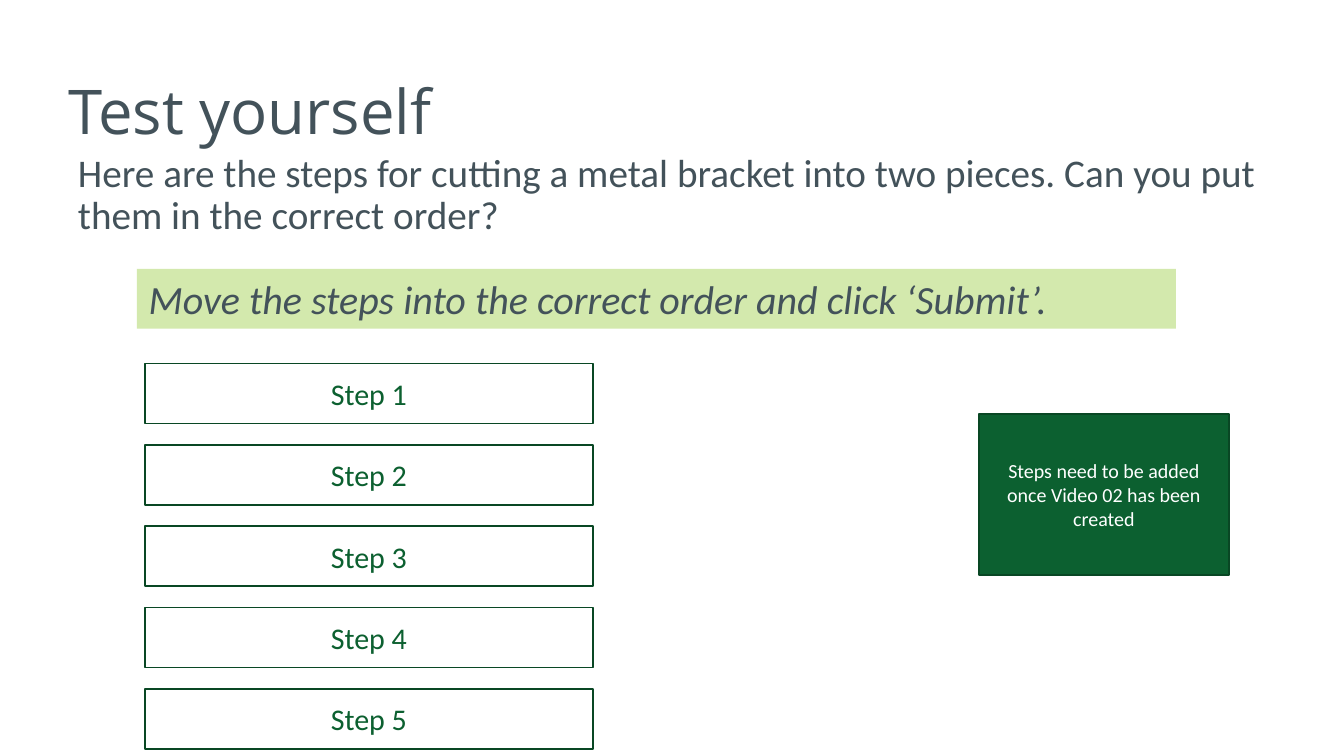
from pptx import Presentation
from pptx.dml.color import RGBColor
from pptx.enum import shapes, text
from pptx.util import Inches, Pt

SLATE, GREEN, DARK_GREEN = "43525A", "0C6030", "094724"
LIME, WHITE = "D3E9AD", "FFFFFF"
STEPS = [f"Step {n}" for n in range(1, 6)]
STEP_HEIGHT = 0.5


def color(value):
    return RGBColor.from_string(value)


def write(sp, words, size, ink, font="Calibri", anchor=text.MSO_ANCHOR.MIDDLE):
    """Fill a shape with one wrapped paragraph and return the paragraph."""
    tf = sp.text_frame
    tf.word_wrap = True
    tf.vertical_anchor = anchor
    p = tf.paragraphs[0]
    p.text = words
    p.alignment = text.PP_ALIGN.LEFT
    p.font.name, p.font.size = font, Pt(size)
    p.font.color.rgb = color(ink)
    return p


def add_heading(s, box, words, size, **style):
    """Add unfilled text with tight lines and narrow margins."""
    sp = s.shapes.add_textbox(*map(Inches, box))
    tf = sp.text_frame
    tf.margin_left = tf.margin_right = Inches(0.08)
    tf.margin_top = tf.margin_bottom = Inches(0.04)
    p = write(sp, words, size, SLATE, **style)
    p.line_spacing = 0.9
    return p


def add_box(s, box, fill, line=None):
    sp = s.shapes.add_shape(shapes.MSO_SHAPE.RECTANGLE, *map(Inches, box))
    sp.shadow.inherit = False
    sp.fill.solid()
    sp.fill.fore_color.rgb = color(fill)
    if line:
        sp.line.color.rgb = color(line)
        sp.line.width = Pt(1)
    else:
        sp.line.fill.background()
    return sp


def add_banner(s, box, words):
    p = write(add_box(s, box, LIME), words, 24, SLATE,
              anchor=text.MSO_ANCHOR.TOP)
    p.font.italic = True


def add_card(s, box, words, size, fill, ink):
    p = write(add_box(s, box, fill, DARK_GREEN), words, size, ink)
    p.alignment = text.PP_ALIGN.CENTER


def add_steps(s, box, steps):
    """Spread the step cards evenly down the box."""
    left, top, width, height = box
    pitch = (height - STEP_HEIGHT) / (len(steps) - 1)
    for i, step in enumerate(steps):
        add_card(s, (left, top + i * pitch, width, STEP_HEIGHT), step,
                 18, WHITE, GREEN)


def main():
    prs = Presentation()
    prs.slide_width, prs.slide_height = Inches(11.2), Inches(6.3)
    s = prs.slides.add_slide(prs.slide_layouts[6])
    add_heading(s, (0.49, 0.34, 9.66, 1.22), "Test yourself", 37,
                font="Open Sans")
    intro = add_heading(
        s, (0.57, 1.24, 10.07, 1.03),
        "Here are the steps for cutting a metal bracket into two pieces. "
        "Can you put them in the correct order?",
        23.5, anchor=text.MSO_ANCHOR.TOP)
    intro.space_before = Pt(8.4)
    add_banner(s, (1.14, 2.24, 8.66, 0.5),
               "Move the steps into the correct order and click ‘Submit’.")
    add_card(s, (8.16, 3.45, 2.08, 1.34),
             "Steps need to be added once Video 02 has been created",
             12, GREEN, WHITE)
    add_steps(s, (1.21, 3.03, 3.73, 3.21), STEPS)
    prs.save("out.pptx")


if __name__ == "__main__":
    main()
